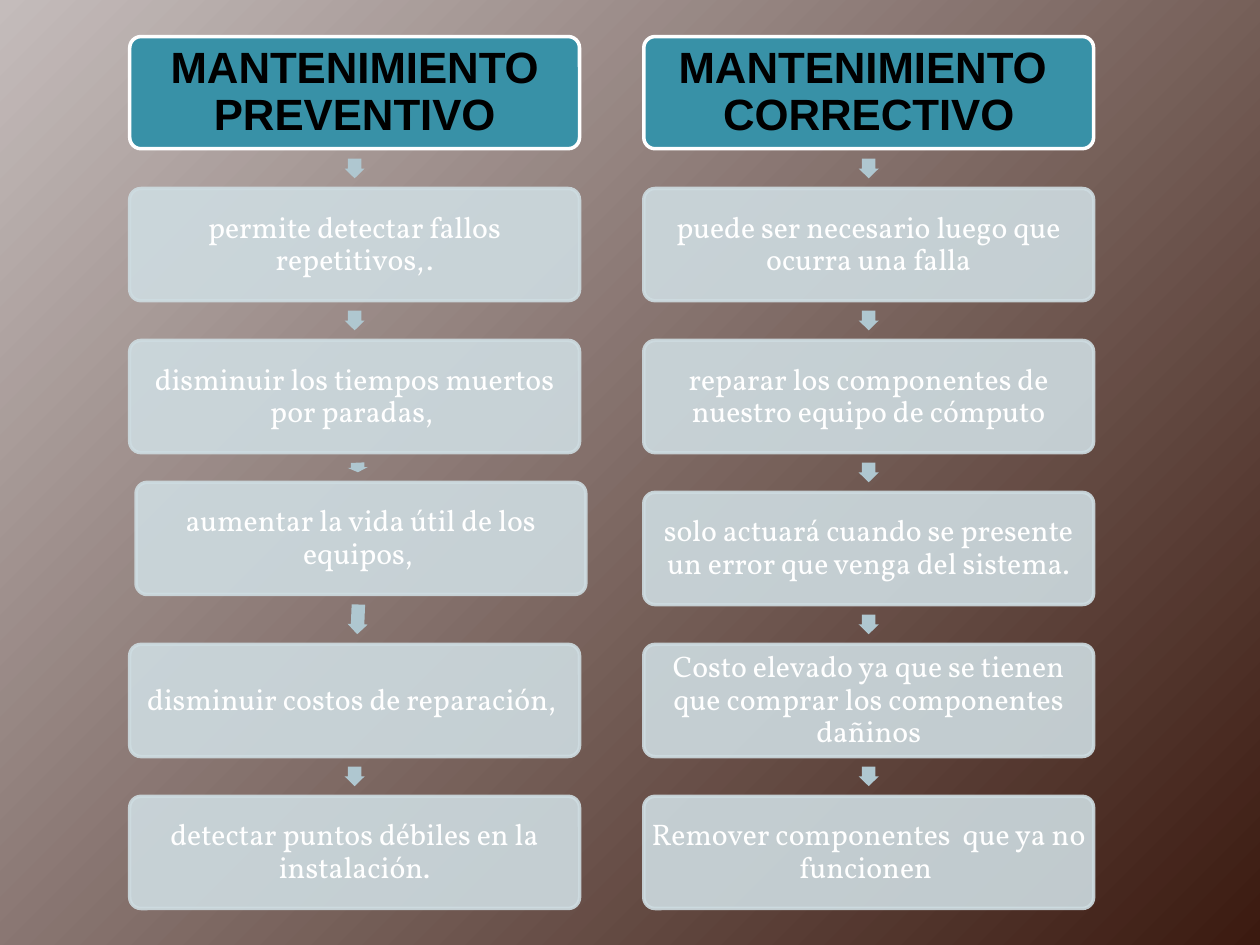
from dataclasses import dataclass
from math import atan2, degrees

from lxml import etree
from pptx import Presentation
from pptx.dml import color as c
from pptx.enum import shapes as s, text as t
from pptx.oxml import ns
from pptx.util import Inches, Pt


@dataclass(frozen=True)
class Theme:
    light: str = "C4BCBB"
    dark: str = "3B1A10"
    head: str = "3891A7"
    card: str = "CEDCE1"
    arrow: str = "AFC7D0"
    white: str = "FFFFFF"
    black: str = "000000"
    title: str = "Arial"
    body: str = "Vollkorn"
    big: int = 25
    small: int = 17
    edge: int = 2
    alpha: int = 90


TH = Theme()
WIDE, HIGH, STEP = 3.57, 0.89, 1.206  # card size and row pitch
TIP, PAD = 0.16, 0.08  # arrow width and its gap to the cards

# Each card: wording and its shift from the grid
LEFT = [
    ("MANTENIMIENTO PREVENTIVO", 0, 0),
    ("permite detectar fallos repetitivos,.", 0, 0),
    ("disminuir los tiempos muertos por paradas, ", 0, 0),
    ("aumentar la vida útil de los equipos, ", 0.05, -0.08),
    ("disminuir costos de reparación, ", 0, 0),
    ("detectar puntos débiles en la instalación.", 0, 0),
]
RIGHT = [
    ("MANTENIMIENTO  CORRECTIVO", 0, 0),
    ("puede ser necesario luego que ocurra una falla", 0, 0),
    ("reparar los componentes de nuestro equipo de cómputo", 0, 0),
    ("solo actuará cuando se presente un error que venga del sistema.", 0, 0),
    ("Costo elevado ya que se tienen que comprar los componentes dañinos", 0, 0),
    ("Remover componentes  que ya no funcionen ", 0, 0),
]


def rgb(code):
    return c.RGBColor.from_string(code)


def paint(fill, code):
    fill.solid()
    fill.fore_color.rgb = rgb(code)


def fade(shape):
    """Make the fill and line partly see-through."""
    for tone in shape._element.spPr.iter(ns.qn("a:srgbClr")):
        etree.SubElement(tone, ns.qn("a:alpha"), val=str(TH.alpha * 1000))


def backdrop(slide):
    fill = slide.background.fill
    fill.gradient()
    fill.gradient_angle = 315
    for stop, code, pos in zip(fill.gradient_stops, (TH.light, TH.dark), (0, 1)):
        stop.color.rgb = rgb(code)
        stop.position = pos


def card(slide, x, y, words, head):
    box = slide.shapes.add_shape(
        s.MSO_SHAPE.ROUNDED_RECTANGLE,
        Inches(x), Inches(y), Inches(WIDE), Inches(HIGH))
    box.shadow.inherit = False
    box.adjustments[0] = 0.1
    paint(box.fill, TH.head if head else TH.card)
    paint(box.line.fill, TH.white if head else TH.card)
    box.line.width = Pt(TH.edge)
    if not head:
        fade(box)

    # Wording
    frame = box.text_frame
    frame.word_wrap = True
    frame.vertical_anchor = t.MSO_ANCHOR.MIDDLE
    inset = Inches(0.03 if head else 0.02)
    frame.margin_left = frame.margin_right = inset
    frame.margin_top = frame.margin_bottom = inset
    para = frame.paragraphs[0]
    para.alignment = t.PP_ALIGN.CENTER
    para.line_spacing = 0.9
    run = para.add_run()
    run.text = words
    run.font.name = TH.title if head else TH.body
    run.font.size = Pt(TH.big if head else TH.small)
    run.font.bold = head
    run.font.color.rgb = rgb(TH.black if head else TH.white)


def arrow(slide, start, end):
    """Point from one card's corner position to the next, within the gap."""
    (x1, y1), (x2, y2) = start, end
    size = y2 - y1 - HIGH - 2 * PAD
    mid = (x1 + x2 + WIDE) / 2
    tip = slide.shapes.add_shape(
        s.MSO_SHAPE.DOWN_ARROW,
        Inches(mid - TIP / 2), Inches(y1 + HIGH + PAD), Inches(TIP), Inches(size))
    tip.shadow.inherit = False
    tip.adjustments[0] = 0.667
    tip.adjustments[1] = 0.5
    tip.rotation = -degrees(atan2(x2 - x1, y2 - y1))
    paint(tip.fill, TH.arrow)
    tip.line.fill.background()


def column(slide, x, y, rows):
    spots = [(x + dx, y + i * STEP + dy) for i, (_, dx, dy) in enumerate(rows)]
    for i, (spot, row) in enumerate(zip(spots, rows)):
        if i:
            arrow(slide, spots[i - 1], spot)
        card(slide, *spot, row[0], i == 0)


def main():
    deck = Presentation()
    deck.slide_width, deck.slide_height = Inches(10), Inches(7.5)
    slide = deck.slides.add_slide(deck.slide_layouts[6])
    backdrop(slide)
    column(slide, 1.03, 0.29, LEFT)
    column(slide, 5.11, 0.29, RIGHT)
    deck.save("out.pptx")


if __name__ == "__main__":
    main()
